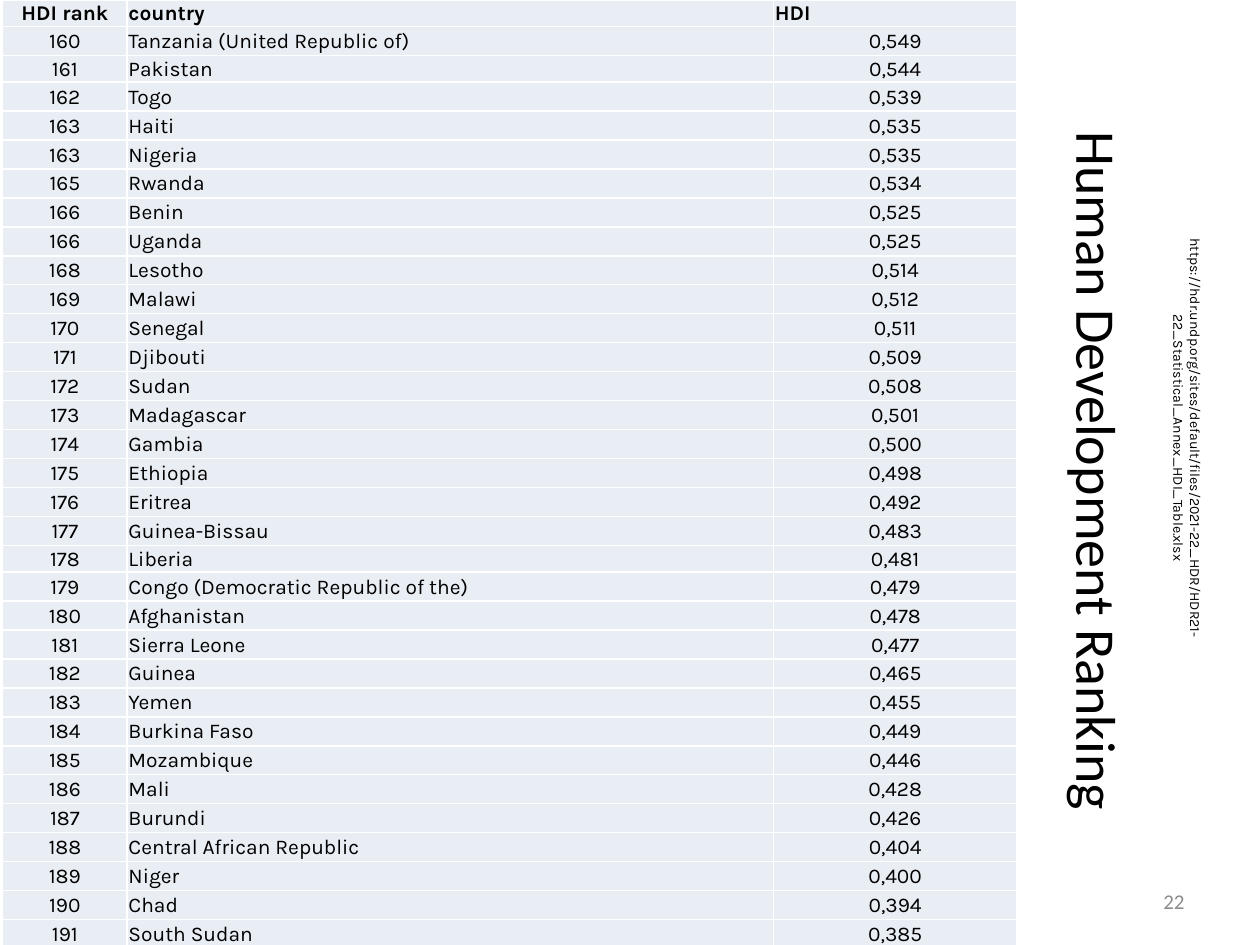
from typing import NamedTuple

from lxml import etree
from pptx import Presentation
from pptx.dml.color import RGBColor
from pptx.enum import text
from pptx.oxml.ns import qn
from pptx.util import Inches, Pt

COLORS = {"text": "000000", "number": "8C8C8C", "cell": "E9EDF4", "border": "FFFFFF"}
ALIGN = text.PP_ALIGN
COLUMN_WIDTHS = (0.99, 5.13, 1.93)
ROW_HEIGHT, LOW_ROW_HEIGHT = 0.23, 0.2
LOW_ROWS = {0, 2, 19}


class Country(NamedTuple):
    rank: int
    name: str
    hdi: str


class Label(NamedTuple):
    content: str
    left: float
    top: float
    width: float
    height: float
    size: int
    font: str
    color: str = "text"
    align: ALIGN = ALIGN.CENTER
    anchor: text.MSO_ANCHOR = text.MSO_ANCHOR.MIDDLE
    rotation: int = 0


COUNTRIES = [
    Country(160, "Tanzania (United Republic of)", "0,549"),
    Country(161, "Pakistan", "0,544"),
    Country(162, "Togo", "0,539"),
    Country(163, "Haiti", "0,535"),
    Country(163, "Nigeria", "0,535"),
    Country(165, "Rwanda", "0,534"),
    Country(166, "Benin", "0,525"),
    Country(166, "Uganda", "0,525"),
    Country(168, "Lesotho", "0,514"),
    Country(169, "Malawi", "0,512"),
    Country(170, "Senegal", "0,511"),
    Country(171, "Djibouti", "0,509"),
    Country(172, "Sudan", "0,508"),
    Country(173, "Madagascar", "0,501"),
    Country(174, "Gambia", "0,500"),
    Country(175, "Ethiopia", "0,498"),
    Country(176, "Eritrea", "0,492"),
    Country(177, "Guinea-Bissau", "0,483"),
    Country(178, "Liberia", "0,481"),
    Country(179, "Congo (Democratic Republic of the)", "0,479"),
    Country(180, "Afghanistan", "0,478"),
    Country(181, "Sierra Leone", "0,477"),
    Country(182, "Guinea", "0,465"),
    Country(183, "Yemen", "0,455"),
    Country(184, "Burkina Faso", "0,449"),
    Country(185, "Mozambique", "0,446"),
    Country(186, "Mali", "0,428"),
    Country(187, "Burundi", "0,426"),
    Country(188, "Central African Republic", "0,404"),
    Country(189, "Niger", "0,400"),
    Country(190, "Chad", "0,394"),
    Country(191, "South Sudan", "0,385"),
]

TITLE = Label("Human Development Ranking", 4.98, 3.11, 7.48, 1.25, 32, "Calibri", rotation=90)
SLIDE_NUMBER = Label("22", 7.17, 6.95, 2.33, 0.4, 12, "Calibri", "number", ALIGN.RIGHT)
SOURCE = Label(
    "https://hdr.undp.org/sites/default/files/2021-22_HDR/"
    "HDR21-22_Statistical_Annex_HDI_Table.xlsx",
    6.92, 3.29, 5, 0.37, 8, "Karla", anchor=text.MSO_ANCHOR.TOP, rotation=90,
)


def style_paragraph(paragraph, size: int, font: str, color: str, align: ALIGN,
                    bold: bool = False) -> None:
    paragraph.alignment = align
    paragraph.font.size = Pt(size)
    paragraph.font.name = font
    paragraph.font.bold = bold
    paragraph.font.color.rgb = RGBColor.from_string(COLORS[color])


def add_label(slide, label: Label) -> None:
    shape = slide.shapes.add_textbox(Inches(label.left), Inches(label.top),
                                     Inches(label.width), Inches(label.height))
    shape.rotation = label.rotation
    frame = shape.text_frame
    frame.word_wrap = True
    frame.vertical_anchor = label.anchor
    frame.text = label.content
    style_paragraph(frame.paragraphs[0], label.size, label.font, label.color, label.align)


def set_borders(cell) -> None:
    """Draw a thin line on all four sides; the lines must precede the cell fill."""
    properties = cell._tc.get_or_add_tcPr()
    for position, side in enumerate(("lnL", "lnR", "lnT", "lnB")):
        line = etree.Element(qn(f"a:{side}"), w=str(Pt(1)))
        fill = etree.SubElement(line, qn("a:solidFill"))
        etree.SubElement(fill, qn("a:srgbClr"), val=COLORS["border"])
        properties.insert(position, line)


def fill_cell(cell, content: str, align: ALIGN, bold: bool) -> None:
    cell.text = content
    cell.vertical_anchor = text.MSO_ANCHOR.MIDDLE
    cell.margin_left = cell.margin_right = cell.margin_top = Inches(0.01)
    cell.margin_bottom = 0
    cell.fill.solid()
    cell.fill.fore_color.rgb = RGBColor.from_string(COLORS["cell"])
    set_borders(cell)
    style_paragraph(cell.text_frame.paragraphs[0], 12, "Karla", "text", align, bold)


def add_ranking_table(slide, countries: list[Country]) -> None:
    rows = [("HDI rank", "country", "HDI"), *countries]
    heights = [LOW_ROW_HEIGHT if index in LOW_ROWS else ROW_HEIGHT
               for index in range(len(rows))]
    table = slide.shapes.add_table(len(rows), len(COLUMN_WIDTHS), Inches(0.02), 0,
                                   Inches(sum(COLUMN_WIDTHS)), Inches(sum(heights))).table
    for column, width in zip(table.columns, COLUMN_WIDTHS):
        column.width = Inches(width)
    for row_index, (values, height) in enumerate(zip(rows, heights)):
        table.rows[row_index].height = Inches(height)
        is_header = row_index == 0
        alignments = (ALIGN.CENTER, ALIGN.LEFT, ALIGN.LEFT if is_header else ALIGN.CENTER)
        for column_index, (value, align) in enumerate(zip(values, alignments)):
            fill_cell(table.cell(row_index, column_index), str(value), align, is_header)


def main() -> None:
    presentation = Presentation()
    presentation.slide_width = Inches(10)
    presentation.slide_height = Inches(7.5)
    slide = presentation.slides.add_slide(presentation.slide_layouts[6])
    add_label(slide, TITLE)
    add_ranking_table(slide, COUNTRIES)
    add_label(slide, SLIDE_NUMBER)
    add_label(slide, SOURCE)
    presentation.save("out.pptx")


if __name__ == "__main__":
    main()
